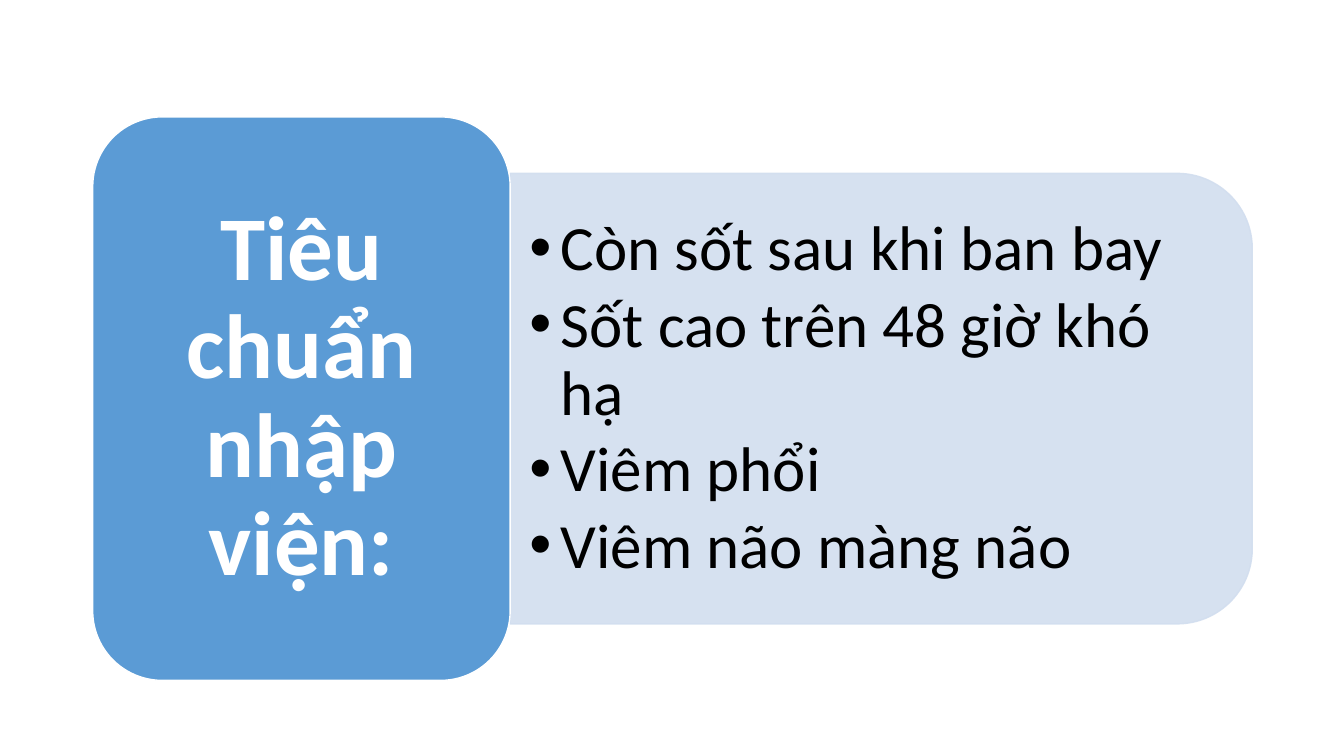
import pptx
import pptx.dml.color
import pptx.enum.shapes
import pptx.enum.text
import pptx.oxml.ns
import pptx.util
from lxml import etree

SCALE = 9144
COLORS = {"card": "5B9BD5", "panel": "D2DEEF", "white": "FFFFFF", "black": "000000"}
HEADING = "Tiêu chuẩn nhập viện:"
CRITERIA = [
    "Còn sốt sau khi ban bay",
    "Sốt cao trên 48 giờ khó hạ",
    "Viêm phổi",
    "Viêm não màng não",
]


def px(length):
    """Turn px into EMU."""
    return pptx.util.Emu(round(length * SCALE))


def rgb(name):
    """Look up a named colour."""
    return pptx.dml.color.RGBColor.from_string(COLORS[name])


def assign(target, values):
    """Set each attribute named in a dict."""
    for name, value in values.items():
        setattr(target, name, value)


def place(shape, box):
    """Put a shape at left, top, width, height in px."""
    assign(shape, dict(zip(("left", "top", "width", "height"), map(px, box))))


def add_block(slide, kind, box, fill, line, opacity=100):
    """Add a filled, outlined shape without shadow."""
    shape = slide.shapes.add_shape(kind, *map(px, box))
    shape.shadow.inherit = False
    shape.fill.solid()
    shape.fill.fore_color.rgb = rgb(fill)
    shape.line.color.rgb = rgb(line)
    shape.line.width = pptx.util.Pt(1)
    if opacity < 100:
        for color in shape.element.spPr.iter(pptx.oxml.ns.qn("a:srgbClr")):
            etree.SubElement(color, pptx.oxml.ns.qn("a:alpha"), val=str(opacity * 1000))
    return shape


def fill_placeholder(slide, placeholder, box, insets, lines, font, paragraph_format):
    """Bring a placeholder to the front, place it and write its lines."""
    slide.shapes.element.append(placeholder.element)
    place(placeholder, box)
    frame = placeholder.text_frame
    side, edge = map(px, insets)
    assign(frame, {
        "word_wrap": True,
        "auto_size": pptx.enum.text.MSO_AUTO_SIZE.NONE,
        "vertical_anchor": pptx.enum.text.MSO_ANCHOR.MIDDLE,
        "margin_left": side, "margin_right": side,
        "margin_top": edge, "margin_bottom": edge,
    })
    frame.text = "\n".join(lines)
    color = font.pop("color")
    for paragraph in frame.paragraphs:
        assign(paragraph, {"line_spacing": 0.9, "space_before": pptx.util.Pt(0)})
        assign(paragraph, paragraph_format)
        run = paragraph.runs[0]
        assign(run.font, {"name": "Calibri", **font})
        run.font.color.rgb = rgb(color)
    return frame


def add_criteria(slide, box):
    """Draw the pale panel, rounded on its right, with the bullet list."""
    left, top, width, height = box
    turned = (left + (width - height) / 2, top + (height - width) / 2, height, width)
    panel = add_block(slide, pptx.enum.shapes.MSO_SHAPE.ROUND_2_SAME_RECTANGLE,
                      turned, "panel", "panel", 90)
    panel.rotation = 90
    frame = fill_placeholder(
        slide, slide.placeholders[1], (left, top + 22, width - 22, height - 43), (19, 9),
        CRITERIA, {"size": pptx.util.Pt(45), "color": "black"},
        {"level": 1, "space_after": pptx.util.Pt(6)})
    for paragraph in frame.paragraphs:
        properties = paragraph._p.get_or_add_pPr()
        properties.set("marL", str(px(31)))
        properties.set("indent", str(px(-31)))
        etree.SubElement(properties, pptx.oxml.ns.qn("a:buChar"), char="•")


def add_heading(slide, box):
    """Draw the blue card with the centred title."""
    left, top, width, height = box
    add_block(slide, pptx.enum.shapes.MSO_SHAPE.ROUNDED_RECTANGLE, box, "card", "white")
    fill_placeholder(
        slide, slide.shapes.title, (left + 20, top + 20, width - 40, height - 40), (27, 14),
        [HEADING], {"size": pptx.util.Pt(65), "bold": True, "color": "white"},
        {"alignment": pptx.enum.text.PP_ALIGN.CENTER})


def main():
    """Build and save the slide."""
    presentation = pptx.Presentation()
    assign(presentation, {"slide_width": px(1333), "slide_height": px(750)})
    slide = presentation.slides.add_slide(presentation.slide_layouts[1])
    add_criteria(slide, (506, 172, 736, 447))
    add_heading(slide, (92, 116, 414, 559))
    presentation.save("out.pptx")


if __name__ == "__main__":
    main()
